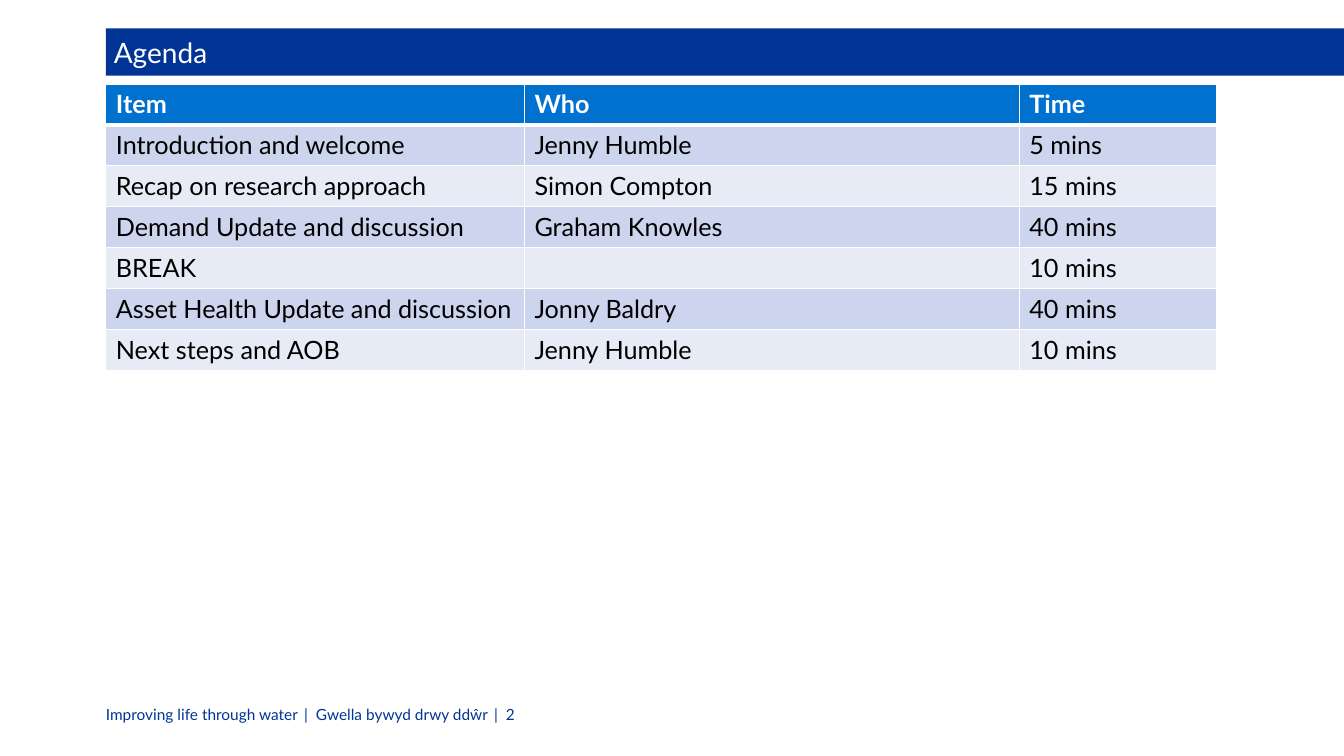
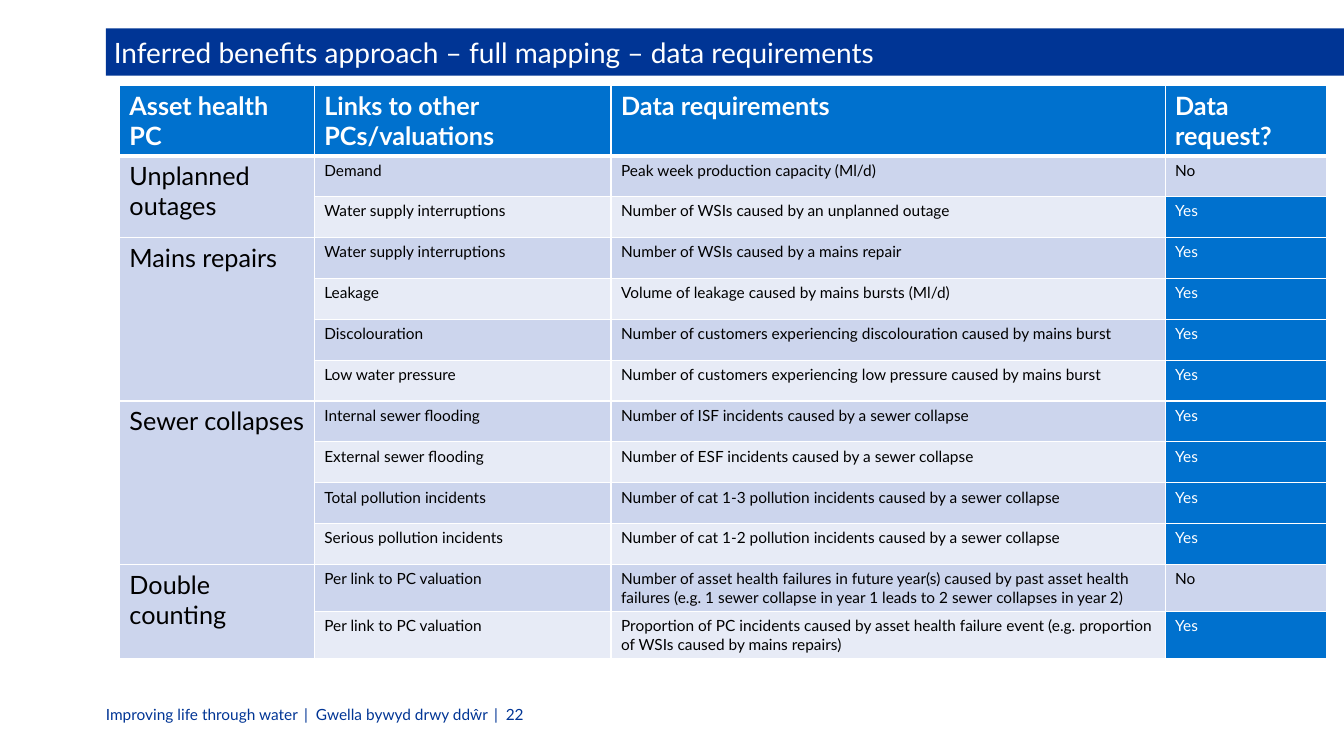
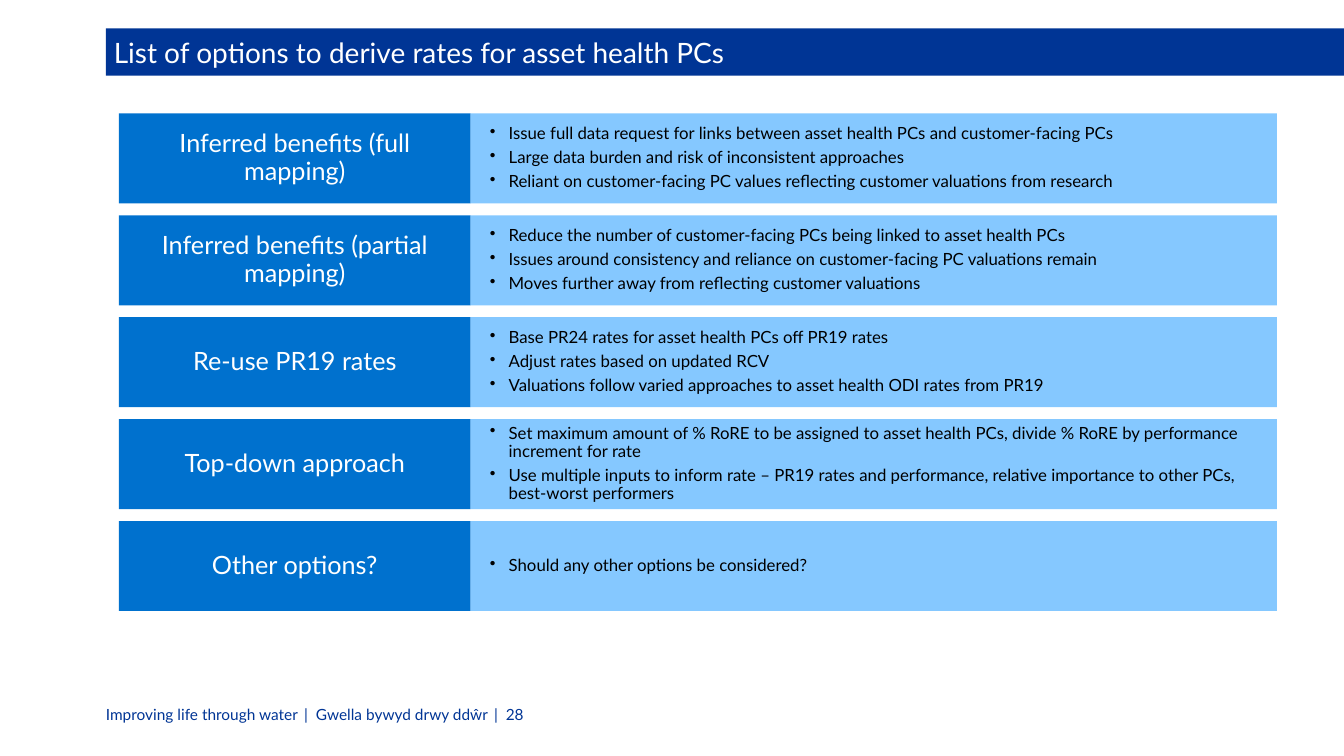
from dataclasses import dataclass

from lxml import etree
from pptx import Presentation
from pptx.dml.color import RGBColor
from pptx.enum.shapes import MSO_SHAPE
from pptx.enum.text import MSO_ANCHOR, PP_ALIGN
from pptx.oxml.ns import qn
from pptx.util import Pt

RECTANGLE = MSO_SHAPE.RECTANGLE
MIDDLE = MSO_ANCHOR.MIDDLE
LEFT = PP_ALIGN.LEFT
CENTER = PP_ALIGN.CENTER


@dataclass(frozen=True)
class Theme:
    font: str = "Lato"
    navy: str = "003595"
    blue: str = "0071CE"
    sky: str = "85C8FF"
    white: str = "FFFFFF"
    black: str = "000000"
    bands: tuple = ("CCD5ED", "E7EBF6")
    title_size: float = 20
    large_size: float = 18
    bullet_size: float = 12
    small_size: float = 11
    slide_width: float = 960
    slide_height: float = 540
    margin: float = 75.6
    row_height: float = 29.2


FOOTER_PARTS = ("Improving life through water", "Gwella bywyd drwy ddŵr")

AGENDA = [
    ("Item", "Who", "Time"),
    ("Introduction and welcome", "Jenny Humble", "5 mins"),
    ("Recap on research approach", "Simon Compton", "15 mins"),
    ("Demand Update and discussion", "Graham Knowles", "40 mins"),
    ("BREAK", "", "10 mins"),
    ("Asset Health Update and discussion", "Jonny Baldry", "40 mins"),
    ("Next steps and AOB", "Jenny Humble", "10 mins"),
]

MAPPING_HEADER = ("Asset health PC", "Links to other PCs/valuations",
                  "Data requirements", "Data request?")
MAPPING = {
    "Unplanned outages": [
        ("Demand", "Peak week production capacity (Ml/d)", "No"),
        ("Water supply interruptions",
         "Number of WSIs caused by an unplanned outage", "Yes"),
    ],
    "Mains repairs": [
        ("Water supply interruptions",
         "Number of WSIs caused by a mains repair", "Yes"),
        ("Leakage", "Volume of leakage caused by mains bursts (Ml/d)", "Yes"),
        ("Discolouration",
         "Number of customers experiencing discolouration caused by mains burst", "Yes"),
        ("Low water pressure",
         "Number of customers experiencing low pressure caused by mains burst", "Yes"),
    ],
    "Sewer collapses": [
        ("Internal sewer flooding",
         "Number of ISF incidents caused by a sewer collapse", "Yes"),
        ("External sewer flooding",
         "Number of ESF incidents caused by a sewer collapse", "Yes"),
        ("Total pollution incidents",
         "Number of cat 1-3 pollution incidents caused by a sewer collapse", "Yes"),
        ("Serious pollution incidents",
         "Number of cat 1-2 pollution incidents caused by a sewer collapse", "Yes"),
    ],
    "Double counting": [
        ("Per link to PC valuation",
         "Number of asset health failures in future year(s) caused by past asset health "
         "failures (e.g. 1 sewer collapse in year 1 leads to 2 sewer collapses in year 2)",
         "No"),
        ("Per link to PC valuation",
         "Proportion of PC incidents caused by asset health failure event "
         "(e.g. proportion of WSIs caused by mains repairs)", "Yes"),
    ],
}

OPTIONS = {
    "Inferred benefits (full mapping)": [
        "Issue full data request for links between asset health PCs and customer-facing PCs",
        "Large data burden and risk of inconsistent approaches",
        "Reliant on customer-facing PC values reflecting customer valuations from research",
    ],
    "Inferred benefits (partial mapping)": [
        "Reduce the number of customer-facing PCs being linked to asset health PCs",
        "Issues around consistency and reliance on customer-facing PC valuations remain",
        "Moves further away from reflecting customer valuations",
    ],
    "Re-use PR19 rates": [
        "Base PR24 rates for asset health PCs off PR19 rates",
        "Adjust rates based on updated RCV",
        "Valuations follow varied approaches to asset health ODI rates from PR19",
    ],
    "Top-down approach": [
        "Set maximum amount of % RoRE to be assigned to asset health PCs, "
        "divide % RoRE by performance increment for rate",
        "Use multiple inputs to inform rate – PR19 rates and performance, "
        "relative importance to other PCs, best-worst performers",
    ],
    "Other options?": ["Should any other options be considered?"],
}


class SlideBuilder:
    """Holds the style and the current slide."""

    def __init__(self, deck, theme):
        self.deck = deck
        self.theme = theme
        self.page = None

    # Slide frame: title band and footer
    def start(self, title, number):
        theme = self.theme
        self.page = self.deck.slides.add_slide(self.deck.slide_layouts[6])
        self.footer(number)
        band = self.panel(theme.margin, 20.2, theme.slide_width - theme.margin, 33.8,
                          theme.navy, (5.7, 2.8, 28.3, 2.8))
        para = band.paragraphs[0]
        para.alignment = LEFT
        self.span(para, title, theme.title_size, theme.white)

    def footer(self, number):
        theme = self.theme
        box = self.page.shapes.add_textbox(Pt(theme.margin), Pt(503.3), Pt(491), Pt(13.7))
        self.frame(box.text_frame, (0, 0, 0, 0))
        para = box.text_frame.paragraphs[0]
        for part in FOOTER_PARTS:
            self.span(para, part, theme.small_size, theme.navy)
            divider = self.span(para, " | ", theme.small_size, theme.navy)
            divider.font._element.set("spc", "140")  # wider gap round the divider
        self.span(para, str(number), theme.small_size, theme.navy)

    # Text
    def frame(self, frame, insets):
        frame.word_wrap = True
        frame.vertical_anchor = MIDDLE
        (frame.margin_left, frame.margin_top,
         frame.margin_right, frame.margin_bottom) = map(Pt, insets)

    def span(self, para, text, size, color, bold=False):
        span = para.add_run()
        span.text = text
        span.font.name = self.theme.font
        span.font.size = Pt(size)
        span.font.bold = bold
        span.font.color.rgb = RGBColor.from_string(color)
        return span

    def tight(self, para, size, alignment):
        para.alignment = alignment
        para.line_spacing = 0.9
        para.space_after = Pt(0.35 * size)

    def bullet(self, para, indent):
        props = para._p.get_or_add_pPr()
        props.set("marL", str(Pt(indent)))
        props.set("indent", str(-Pt(indent)))
        etree.SubElement(props, qn("a:buChar")).set("char", "•")

    # Filled rectangle; returns its text frame
    def panel(self, left, top, width, height, color, insets):
        box = self.page.shapes.add_shape(RECTANGLE, Pt(left), Pt(top), Pt(width), Pt(height))
        box.shadow.inherit = False
        box.fill.solid()
        box.fill.fore_color.rgb = RGBColor.from_string(color)
        box.line.fill.background()
        self.frame(box.text_frame, insets)
        return box.text_frame

    # Tables
    def table(self, left, top, widths, row_count):
        height = self.theme.row_height
        grid = self.page.shapes.add_table(
            row_count, len(widths), Pt(left), Pt(top),
            Pt(sum(widths)), Pt(height * row_count)).table
        for column, width in zip(grid.columns, widths):
            column.width = Pt(width)
        for row in grid.rows:
            row.height = Pt(height)
        return grid

    def cell(self, grid, row, column, text, size, highlight=False):
        theme = self.theme
        header = row == 0
        strong = header or highlight
        cell = grid.cell(row, column)
        heavy = {0: "lnB", 1: "lnT"}.get(row)  # thick rule under the header
        for side in ("lnL", "lnR", "lnT", "lnB"):
            self.border(cell, side, 3 if side == heavy else 1)
        # Merged cells keep the first band colour
        band = 0 if cell.is_merge_origin or cell.is_spanned else (row - 1) % 2
        cell.fill.solid()
        cell.fill.fore_color.rgb = RGBColor.from_string(
            theme.blue if strong else theme.bands[band])
        if text:
            self.span(cell.text_frame.paragraphs[0], text, size,
                      theme.white if strong else theme.black, header)

    def border(self, cell, side, width):
        line = etree.SubElement(cell._tc.get_or_add_tcPr(), qn("a:" + side))
        line.set("w", str(Pt(width)))
        fill = etree.SubElement(line, qn("a:solidFill"))
        etree.SubElement(fill, qn("a:srgbClr")).set("val", self.theme.white)

    # Option row: label on the left, bullets on the right
    def option(self, top, label, points):
        theme = self.theme
        left, label_width, points_width, height = 85, 251.2, 576, 64.3
        insets = (13.7, 7.9, 13.7, 7.9)
        name = self.panel(left, top, label_width, height, theme.blue, insets)
        para = name.paragraphs[0]
        self.tight(para, theme.large_size, CENTER)
        self.span(para, label, theme.large_size, theme.white)
        details = self.panel(left + label_width, top, points_width, height, theme.sky, insets)
        for index, point in enumerate(points):
            para = details.add_paragraph() if index else details.paragraphs[0]
            self.tight(para, theme.bullet_size, LEFT)
            self.bullet(para, 13.5)
            self.span(para, point, theme.bullet_size, theme.black)


def agenda_slide(builder):
    builder.start("Agenda", 2)
    grid = builder.table(builder.theme.margin, 60, (299, 353.5, 141.3), len(AGENDA))
    for row, texts in enumerate(AGENDA):
        for column, text in enumerate(texts):
            builder.cell(grid, row, column, text, builder.theme.large_size)


def mapping_slide(builder):
    theme = builder.theme
    builder.start("Inferred benefits approach – full mapping – data requirements", 22)
    row_count = 1 + sum(map(len, MAPPING.values()))
    grid = builder.table(85.3, 60.8, (139.2, 212, 395.8, 115.6), row_count)
    for column, text in enumerate(MAPPING_HEADER):
        builder.cell(grid, 0, column, text, theme.large_size)
    row = 1
    for group, links in MAPPING.items():
        grid.cell(row, 0).merge(grid.cell(row + len(links) - 1, 0))
        for index, texts in enumerate(links):
            builder.cell(grid, row, 0, "" if index else group, theme.large_size)
            for column, text in enumerate(texts, 1):
                builder.cell(grid, row, column, text, theme.small_size, text == "Yes")
            row += 1


def options_slide(builder):
    builder.start("List of options to derive rates for asset health PCs", 28)
    first_top, pitch = 81, 72.8
    for index, (label, points) in enumerate(OPTIONS.items()):
        builder.option(first_top + index * pitch, label, points)


def main():
    theme = Theme()
    deck = Presentation()
    deck.slide_width = Pt(theme.slide_width)
    deck.slide_height = Pt(theme.slide_height)
    builder = SlideBuilder(deck, theme)
    agenda_slide(builder)
    mapping_slide(builder)
    options_slide(builder)
    deck.save("out.pptx")


if __name__ == "__main__":
    main()
